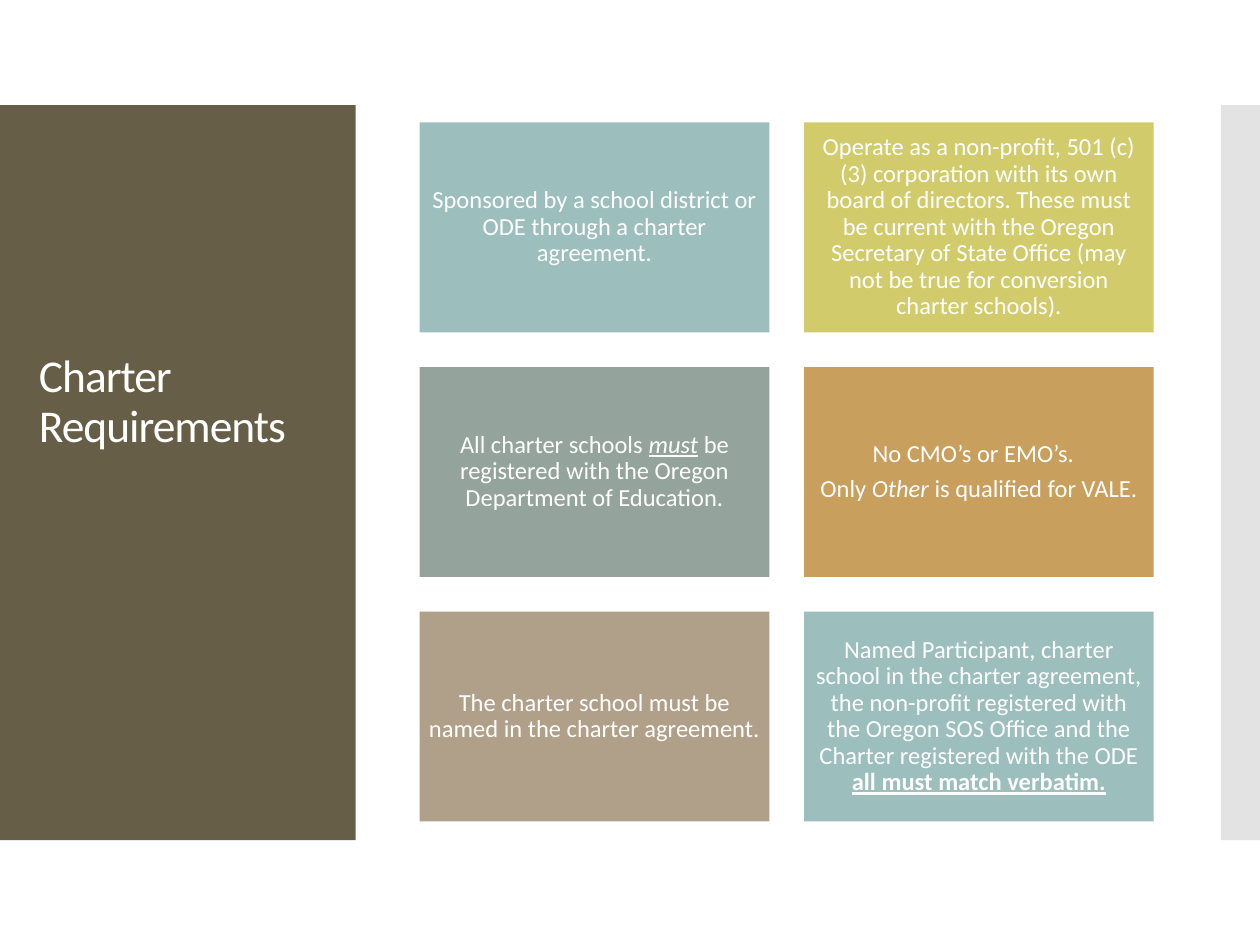
"""Build the Charter Requirements slide."""
import dataclasses
import typing

import lxml.etree
import pptx
import pptx.dml.color
import pptx.enum.shapes
import pptx.enum.text
import pptx.oxml.ns
import pptx.util

Cm = pptx.util.Cm
Pt = pptx.util.Pt
COLORS = {
    "panel": "675E47", "edge": "C8C8C8", "text": "FFFFFF",
    "teal": "9CBEBD", "lime": "D2CB6C", "sage": "95A39D",
    "ochre": "C89F5D", "taupe": "B1A089",
}
FONT = {"name": "Calibri", "size": Pt(14)}
TITLE_FONT = {"name": "Calibri", "size": Pt(26)}
PARAGRAPH = {
    "alignment": pptx.enum.text.PP_ALIGN.CENTER,
    "line_spacing": 0.9,
    "space_after": Pt(4.9),
}
FRAME = {
    "word_wrap": True,
    "vertical_anchor": pptx.enum.text.MSO_ANCHOR.MIDDLE,
    "auto_size": pptx.enum.text.MSO_AUTO_SIZE.NONE,
}
MARGINS = {f"margin_{side}": Cm(0.15) for side in ("left", "top", "right", "bottom")}
COLUMNS = 2
CARD_LEFT, CARD_TOP = 8.46, 2.47
CARD_WIDTH, CARD_HEIGHT, CARD_GAP = 7.05, 4.23, 0.7
BAND_TOP, BAND_HEIGHT = 2.12, 14.82


class Phrase(typing.NamedTuple):
    text: str
    emphasis: dict = {}


@dataclasses.dataclass
class Requirement:
    color: str
    paragraphs: list[list[Phrase]]


REQUIREMENTS = [
    Requirement("teal", [[Phrase(
        "Sponsored by a school district or ODE through a charter agreement.")]]),
    Requirement("lime", [[Phrase(
        "Operate as a non-profit, 501 (c) (3) corporation with its own board of "
        "directors. These must be current with the Oregon Secretary of State Office "
        "(may not be true for conversion charter schools).")]]),
    Requirement("sage", [[
        Phrase("All charter schools "),
        Phrase("must", {"italic": True, "underline": True}),
        Phrase(" be registered with the Oregon Department of Education.")]]),
    Requirement("ochre", [
        [Phrase("No CMO’s or EMO’s.  ")],
        [Phrase("Only "), Phrase("Other ", {"italic": True}),
         Phrase("is qualified for VALE.")]]),
    Requirement("taupe", [[Phrase(
        "The charter school must be named in the charter agreement.")]]),
    Requirement("teal", [[
        Phrase("Named Participant, charter school in the charter agreement, the "
               "non-profit registered with the Oregon SOS Office and the Charter "
               "registered with the ODE "),
        Phrase("all must match verbatim.", {"bold": True, "underline": True})]]),
]


def apply_format(target: typing.Any, values: dict) -> None:
    """Set each named attribute on the target."""
    for name, value in values.items():
        setattr(target, name, value)


def rgb(color: str) -> pptx.dml.color.RGBColor:
    """Look up a palette colour."""
    return pptx.dml.color.RGBColor.from_string(COLORS[color])


def style_run(run: typing.Any, values: dict) -> None:
    """Format a run in the slide's text colour."""
    apply_format(run.font, values)
    run.font.color.rgb = rgb("text")


def draw_block(slide: typing.Any, left: float, top: float, width: float,
               height: float, color: str) -> typing.Any:
    """Draw a plain filled rectangle, measured in centimetres."""
    block = slide.shapes.add_shape(
        pptx.enum.shapes.MSO_SHAPE.RECTANGLE,
        Cm(left), Cm(top), Cm(width), Cm(height))
    block.shadow.inherit = False
    block.fill.solid()
    block.fill.fore_color.rgb = rgb(color)
    block.line.fill.background()
    return block


def draw_edge(slide: typing.Any) -> None:
    """Draw the half-transparent bar at the right edge."""
    edge = draw_block(slide, 24.61, BAND_TOP, 0.79, BAND_HEIGHT, "edge")
    swatch = edge.element.spPr.find(".//" + pptx.oxml.ns.qn("a:srgbClr"))
    lxml.etree.SubElement(swatch, pptx.oxml.ns.qn("a:alpha"), val="50000")


def draw_title(slide: typing.Any) -> None:
    """Place the title in front of its panel."""
    title = slide.shapes.title
    apply_format(title, {"left": Cm(0.53), "top": Cm(3.12),
                         "width": Cm(6.15), "height": Cm(10)})
    apply_format(title.text_frame, FRAME)
    heading = title.text_frame.paragraphs[0]
    heading.text = "Charter\vRequirements"
    apply_format(heading, {"alignment": pptx.enum.text.PP_ALIGN.LEFT,
                           "line_spacing": 0.9})
    for run in heading.runs:
        style_run(run, TITLE_FONT)
        run.font._element.set("spc", "-60")
    title.element.getparent().append(title.element)


def draw_requirement(slide: typing.Any, index: int, requirement: Requirement) -> None:
    """Draw one requirement card at its place in the grid."""
    row, column = divmod(index, COLUMNS)
    card = draw_block(slide, CARD_LEFT + column * (CARD_WIDTH + CARD_GAP),
                      CARD_TOP + row * (CARD_HEIGHT + CARD_GAP),
                      CARD_WIDTH, CARD_HEIGHT, requirement.color)
    frame = card.text_frame
    apply_format(frame, FRAME | MARGINS)
    for number, phrases in enumerate(requirement.paragraphs):
        paragraph = frame.add_paragraph() if number else frame.paragraphs[0]
        apply_format(paragraph, PARAGRAPH)
        for phrase in phrases:
            run = paragraph.add_run()
            run.text = phrase.text
            style_run(run, FONT | phrase.emphasis)


def main() -> None:
    """Assemble and save the slide."""
    deck = pptx.Presentation()
    apply_format(deck, {"slide_width": Cm(25.4), "slide_height": Cm(19.05)})
    slide = deck.slides.add_slide(deck.slide_layouts.get_by_name("Title Only"))
    draw_edge(slide)
    draw_block(slide, 0, BAND_TOP, 7.17, BAND_HEIGHT, "panel")
    draw_title(slide)
    for index, requirement in enumerate(REQUIREMENTS):
        draw_requirement(slide, index, requirement)
    deck.save("out.pptx")


if __name__ == "__main__":
    main()
